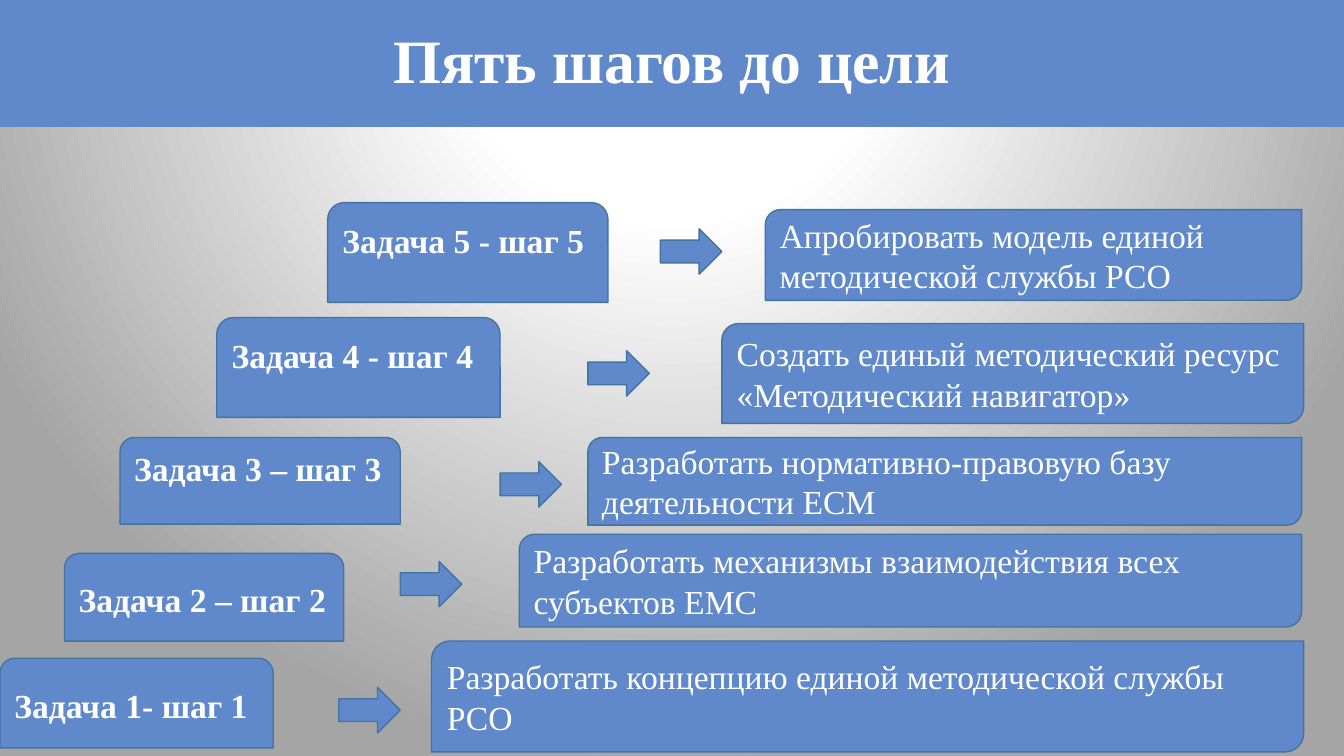
from dataclasses import dataclass

from pptx import Presentation
from pptx.dml.color import RGBColor
from pptx.enum.shapes import MSO_SHAPE as Shape
from pptx.enum.text import MSO_ANCHOR as Anchor, MSO_AUTO_SIZE as AutoSize, PP_ALIGN as Align
from pptx.oxml import parse_xml
from pptx.util import Inches, Pt


@dataclass(frozen=True)
class Theme:
    font: str = "Times New Roman"
    fill: str = "6089CC"
    line: str = "43739E"
    text: str = "FFFFFF"
    glow: str = "FFFFFF"
    edge: str = "A5A5A5"
    title_size: int = 44
    text_size: int = 24
    line_width: int = 1


BACKGROUND = """
<p:bg xmlns:p="http://schemas.openxmlformats.org/presentationml/2006/main"
      xmlns:a="http://schemas.openxmlformats.org/drawingml/2006/main">
  <p:bgPr>
    <a:gradFill rotWithShape="1">
      <a:gsLst>
        <a:gs pos="0"><a:srgbClr val="{glow}"/></a:gs>
        <a:gs pos="28000"><a:srgbClr val="{glow}"/></a:gs>
        <a:gs pos="100000"><a:srgbClr val="{edge}"/></a:gs>
      </a:gsLst>
      <a:path path="circle">
        <a:fillToRect l="50000" t="-80000" r="50000" b="180000"/>
      </a:path>
    </a:gradFill>
    <a:effectLst/>
  </p:bgPr>
</p:bg>"""

STEPS = [
    ("Задача 1- шаг 1", (0, 6.53, 2.71, 0.89), 0.05, (3.36, 6.82),
     "Разработать концепцию единой методической службы РСО", (4.28, 6.36, 8.65, 1.1)),
    ("Задача 2 – шаг 2", (0.64, 5.49, 2.77, 0.87), 0.05, (3.97, 5.57),
     "Разработать механизмы взаимодействия всех субъектов ЕМС", (5.15, 5.3, 7.76, 0.92)),
    ("Задача 3 – шаг 3", (1.19, 4.34, 2.78, 0.86), 0.34, (4.96, 4.58),
     "Разработать нормативно-правовую базу деятельности ЕСМ", (5.83, 4.34, 7.08, 0.87)),
    ("Задача 4 - шаг 4", (2.15, 3.15, 2.81, 0.99), 0.34, (5.83, 3.48),
     "Создать единый методический ресурс «Методический навигатор»", (7.16, 3.21, 5.77, 0.99)),
    ("Задача 5 - шаг 5", (3.25, 2.01, 2.78, 0.99), 0.34, (6.55, 2.27),
     "Апробировать модель единой методической службы РСО", (7.59, 2.08, 5.32, 0.9)),
]


class StepSlide:
    def __init__(self, prs, theme):
        self.theme = theme
        self.slide = prs.slides.add_slide(prs.slide_layouts[5])

    def background(self):
        bg = BACKGROUND.format(glow=self.theme.glow, edge=self.theme.edge)
        self.slide.element.cSld.insert(0, parse_xml(bg))

    def paint(self, sp):
        sp.fill.solid()
        sp.fill.fore_color.rgb = RGBColor.from_string(self.theme.fill)

    def set_text(self, sp, text, size, bold, align):
        tf = sp.text_frame
        tf.text = text
        tf.word_wrap = True
        tf.auto_size = AutoSize.NONE
        tf.vertical_anchor = Anchor.MIDDLE
        p = tf.paragraphs[0]
        p.alignment = align
        p.font.name = self.theme.font
        p.font.size = Pt(size)
        p.font.bold = bold
        p.font.color.rgb = RGBColor.from_string(self.theme.text)
        return p

    def title(self, text, width, height):
        sp = self.slide.shapes.title
        sp.left, sp.top = Inches(0), Inches(0)
        sp.width, sp.height = Inches(width), Inches(height)
        self.paint(sp)
        p = self.set_text(sp, text, self.theme.title_size, True, Align.CENTER)
        p.line_spacing = 0.9

    def shape(self, kind, box):
        sp = self.slide.shapes.add_shape(kind, *map(Inches, box))
        sp.shadow.inherit = False
        self.paint(sp)
        sp.line.color.rgb = RGBColor.from_string(self.theme.line)
        sp.line.width = Pt(self.theme.line_width)
        return sp

    def label(self, text, box, bottom):
        sp = self.shape(Shape.ROUND_2_SAME_RECTANGLE, box)
        self.set_text(sp, text, self.theme.text_size, True, Align.LEFT)
        sp.text_frame.margin_bottom = Inches(bottom)

    def arrow(self, place):
        self.shape(Shape.RIGHT_ARROW, (*place, 0.61, 0.45))

    def task(self, text, box):
        sp = self.shape(Shape.ROUND_2_DIAG_RECTANGLE, box)
        self.set_text(sp, text, self.theme.text_size, False, Align.LEFT)


def main():
    prs = Presentation()
    prs.slide_width, prs.slide_height = Inches(13.33), Inches(7.5)
    s = StepSlide(prs, Theme())
    s.background()
    s.title("Пять шагов до цели", 13.33, 1.26)
    for label, label_box, bottom, arrow_place, task, task_box in STEPS:
        s.label(label, label_box, bottom)
        s.arrow(arrow_place)
        s.task(task, task_box)
    prs.save("out.pptx")


if __name__ == "__main__":
    main()
